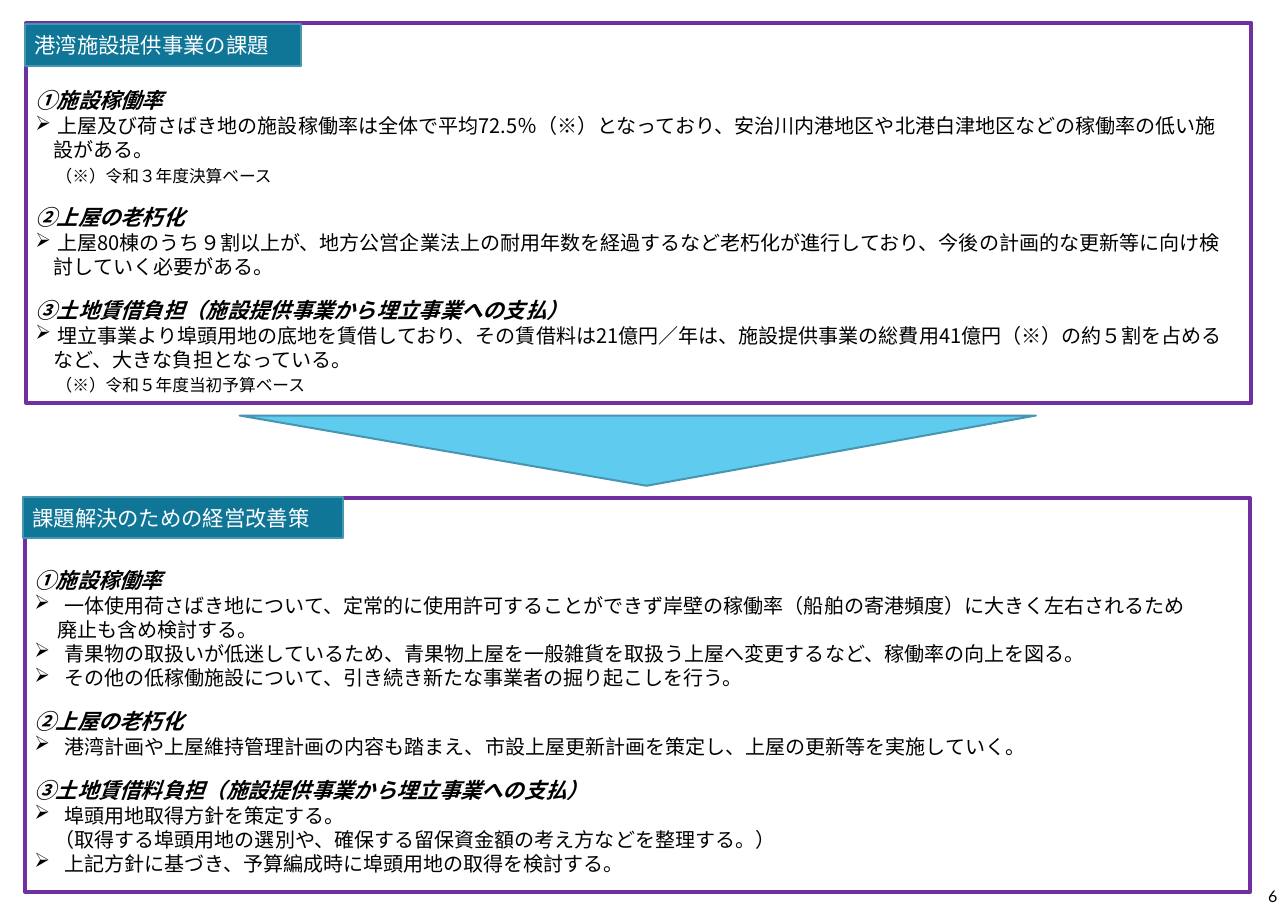
from lxml.etree import SubElement
from pptx import Presentation
from pptx.dml.color import RGBColor
from pptx.enum.shapes import MSO_SHAPE
from pptx.enum.text import MSO_ANCHOR, PP_ALIGN
from pptx.oxml.ns import qn
from pptx.util import Inches, Pt

WIDTH, HEIGHT = Inches(13.39), Inches(9.45)
PURPLE = RGBColor(0x70, 0x30, 0xA0)
TEAL = RGBColor(0x0F, 0x76, 0x98)
EDGE = RGBColor(0x46, 0x96, 0xB1)
SKY = RGBColor(0x5F, 0xCB, 0xEF)
BLACK = RGBColor(0, 0, 0)
WHITE = RGBColor(0xFF, 0xFF, 0xFF)
LATO, NOTO = "Lato", "Noto Sans CJK JP"

# Each line is (kind, text); kinds are "head", "bullet", "more" and "note"
ISSUES = [
    ("head", "①施設稼働率"),
    ("bullet", "上屋及び荷さばき地の施設稼働率は全体で平均72.5％（※）となっており、"
               "安治川内港地区や北港白津地区などの稼働率の低い施"),
    ("more", "設がある。"),
    ("note", "（※）令和３年度決算ベース"),
    ("head", "②上屋の老朽化"),
    ("bullet", "上屋80棟のうち９割以上が、地方公営企業法上の耐用年数を経過するなど"
               "老朽化が進行しており、今後の計画的な更新等に向け検"),
    ("more", "討していく必要がある。"),
    ("head", "③土地賃借負担（施設提供事業から埋立事業への支払）"),
    ("bullet", "埋立事業より埠頭用地の底地を賃借しており、その賃借料は21億円／年は、"
               "施設提供事業の総費用41億円（※）の約５割を占める"),
    ("more", "など、大きな負担となっている。"),
    ("note", "（※）令和５年度当初予算ベース"),
]
MEASURES = [
    ("head", "①施設稼働率"),
    ("bullet", "一体使用荷さばき地について、定常的に使用許可することができず"
               "岸壁の稼働率（船舶の寄港頻度）に大きく左右されるため"),
    ("more", "廃止も含め検討する。"),
    ("bullet", "青果物の取扱いが低迷しているため、青果物上屋を一般雑貨を取扱う上屋へ"
               "変更するなど、稼働率の向上を図る。"),
    ("bullet", "その他の低稼働施設について、引き続き新たな事業者の掘り起こしを行う。"),
    ("head", "②上屋の老朽化"),
    ("bullet", "港湾計画や上屋維持管理計画の内容も踏まえ、市設上屋更新計画を策定し、"
               "上屋の更新等を実施していく。"),
    ("head", "③土地賃借料負担（施設提供事業から埋立事業への支払）"),
    ("bullet", "埠頭用地取得方針を策定する。"),
    ("note", "（取得する埠頭用地の選別や、確保する留保資金額の考え方などを整理する。）"),
    ("bullet", "上記方針に基づき、予算編成時に埠頭用地の取得を検討する。"),
]


def share(x, y):
    """Turn percentages of the slide's width and height into lengths."""
    return round(WIDTH * x / 100), round(HEIGHT * y / 100)


def style(sp, fill=None, line=EDGE, weight=1.5):
    sp.shadow.inherit = False
    if fill is None:
        sp.fill.background()
    else:
        sp.fill.solid()
        sp.fill.fore_color.rgb = fill
    sp.line.color.rgb = line
    sp.line.width = Pt(weight)


def add_rect(s, x, y, w, h, **look):
    sp = s.shapes.add_shape(MSO_SHAPE.RECTANGLE, *share(x, y), *share(w, h))
    style(sp, **look)
    sp.text_frame.word_wrap = True
    return sp


def write(p, text, size=15, font=NOTO, color=BLACK, bold=False, italic=False,
          align=PP_ALIGN.LEFT):
    p.alignment = align
    r = p.add_run()
    r.text = text
    r.font.size, r.font.name = Pt(size), font
    r.font.bold, r.font.italic = bold, italic
    r.font.color.rgb = color
    SubElement(r.font._element, qn("a:ea"), typeface=NOTO)


def set_indent(p, left, bullet=False):
    pPr = p._p.get_or_add_pPr()
    pPr.set("marL", str(Inches(left)))
    pPr.set("indent", str(-Inches(left) if bullet else 0))
    if bullet:
        SubElement(pPr, qn("a:buChar"), char="➢")


def add_panel(s, x, y, w, h, lines, top, hang, more, note_size):
    """Framed panel; hang and more are the indents of bullets and their second lines."""
    tf = add_rect(s, x, y, w, h, line=PURPLE, weight=3).text_frame
    tf.vertical_anchor = MSO_ANCHOR.TOP
    tf.margin_top, tf.margin_right = Inches(top), Inches(0.05)
    indents = {"head": 0, "bullet": hang, "more": more, "note": 0.21}
    sizes = {"head": 16, "note": note_size}
    for i, (kind, text) in enumerate(lines):
        p = tf.paragraphs[0] if i == 0 else tf.add_paragraph()
        head = kind == "head"
        p.line_spacing = Pt(19.2 if head else 18)
        p.space_before = Pt(14.4 if head and i else 0)
        set_indent(p, indents[kind], bullet=kind == "bullet")
        write(p, text, size=sizes.get(kind, 15), bold=head, italic=head,
              align=PP_ALIGN.JUSTIFY)


def add_tab(s, x, y, w, h, text):
    tf = add_rect(s, x, y, w, h, fill=TEAL).text_frame
    tf.vertical_anchor = MSO_ANCHOR.MIDDLE
    write(tf.paragraphs[0], text, size=16, font=LATO, color=WHITE)


def add_down_arrow(s, left, right, top, tip_x, tip_y):
    builder = s.shapes.build_freeform(*share(left, top))
    builder.add_line_segments([share(right, top), share(tip_x, tip_y)], close=True)
    style(builder.convert_to_shape(), fill=SKY)


def add_page_number(s, number):
    sp = s.shapes.add_textbox(*share(94.32, 97.14), *share(5.6, 2.86))
    tf = sp.text_frame
    tf.word_wrap = True
    tf.vertical_anchor = MSO_ANCHOR.MIDDLE
    write(tf.paragraphs[0], number, size=12, font=LATO, align=PP_ALIGN.RIGHT)


def main():
    prs = Presentation()
    prs.slide_width, prs.slide_height = WIDTH, HEIGHT
    s = prs.slides.add_slide(prs.slide_layouts[6])

    # Improvement measures
    add_panel(s, 1.94, 54.81, 95.15, 43.28, MEASURES,
              top=0.72, hang=0.31, more=0.24, note_size=15)
    add_tab(s, 1.79, 54.71, 24.87, 4.44, "課題解決のための経営改善策")

    # Arrow from issues to measures
    add_down_arrow(s, 18.6, 80.43, 45.71, tip_x=50.19, tip_y=53.44)

    # Issues
    add_panel(s, 2.02, 2.54, 95.15, 41.8, ISSUES,
              top=0.67, hang=0.23, more=0.19, note_size=12.5)
    add_tab(s, 1.94, 2.65, 21.43, 4.66, "港湾施設提供事業の課題")

    add_page_number(s, "6")
    prs.save("out.pptx")


if __name__ == "__main__":
    main()
